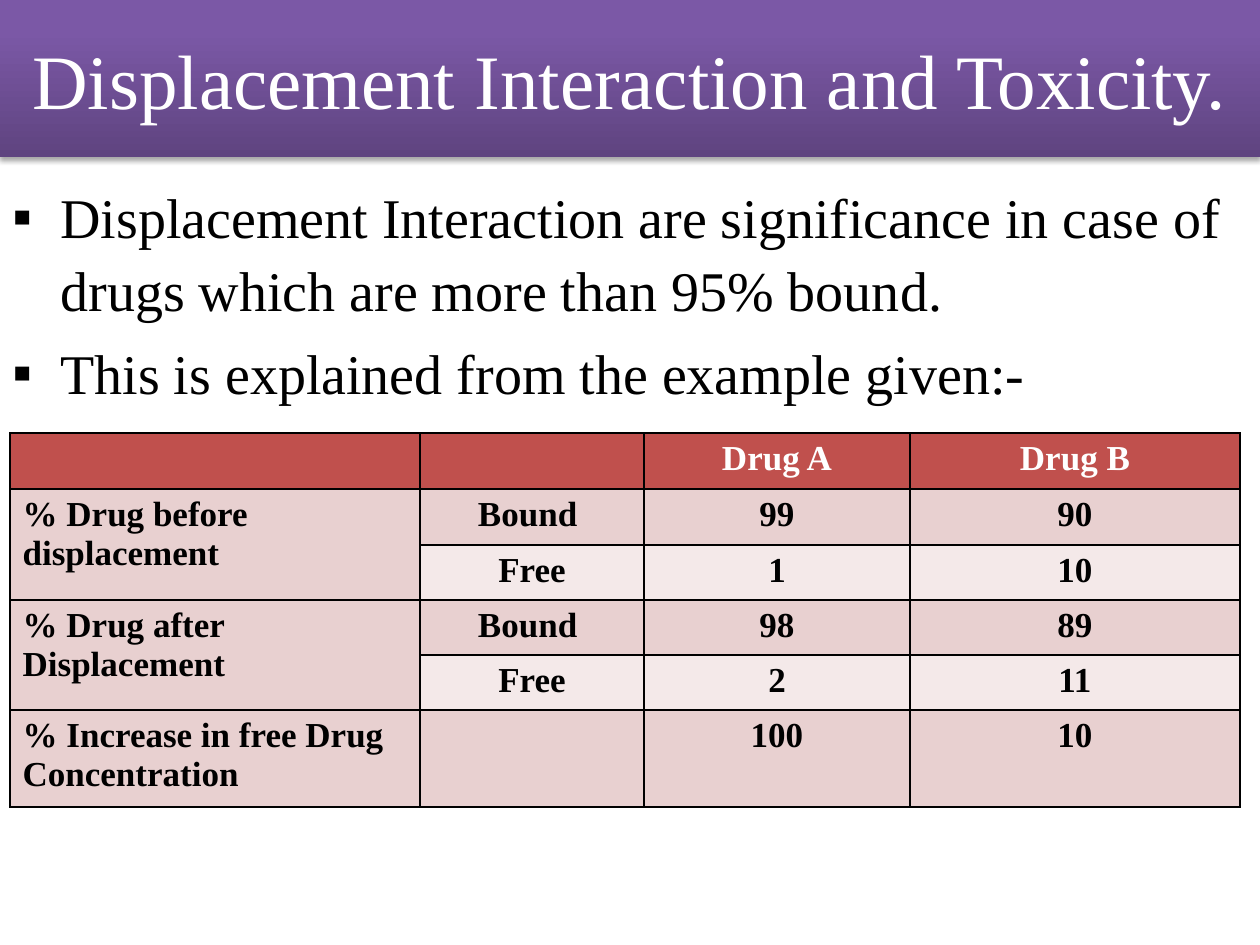
from pptx import Presentation
from pptx.dml.color import RGBColor
from pptx.enum.shapes import MSO_SHAPE as SHAPE
from pptx.enum.text import MSO_ANCHOR as ANCHOR, PP_ALIGN as ALIGN
from pptx.oxml import parse_xml
from pptx.oxml.ns import nsdecls
from pptx.util import Emu, Pt

NS = nsdecls("a")
SCALE = 914400 / 126


def px(n):
    return Emu(round(n * SCALE))


def rgb(value):
    return RGBColor.from_string(value)


def solid(color):
    return f'<a:solidFill><a:srgbClr val="{color}"/></a:solidFill>'


def write(p, text, font="Times New Roman", size=20, color="000000",
          bold=False, align=ALIGN.LEFT):
    p.alignment = align
    r = p.add_run()
    r.text = text
    r.font.name = font
    r.font.size = Pt(size)
    r.font.bold = bold
    r.font.color.rgb = rgb(color)


class Deck:
    """Holds the style and the slide being built."""

    header, dark_band, light_band = "C0504D", "E8D0D0", "F4E9E9"
    banner_stops = ((0, "5F4480"), (80, "7B58A6"), (100, "7C57A8"))

    def __init__(self, prs):
        self.slide = prs.slides.add_slide(prs.slide_layouts[6])

    def banner(self, x, y, w, h, text):
        s = self.slide.shapes.add_shape(SHAPE.RECTANGLE, px(x), px(y), px(w), px(h))
        s.line.fill.background()
        stops = "".join(f'<a:gs pos="{at * 1000}"><a:srgbClr val="{c}"/></a:gs>'
                        for at, c in self.banner_stops)
        sp_pr = s._element.spPr
        sp_pr.insert(2, parse_xml(
            f'<a:gradFill {NS} rotWithShape="1"><a:gsLst>{stops}</a:gsLst>'
            '<a:lin ang="16200000" scaled="0"/></a:gradFill>'))
        sp_pr.append(parse_xml(
            f'<a:effectLst {NS}><a:outerShdw blurRad="{Pt(3.1)}" dist="{Pt(1.8)}" '
            'dir="5400000" rotWithShape="0"><a:srgbClr val="000000">'
            '<a:alpha val="35000"/></a:srgbClr></a:outerShdw></a:effectLst>'))
        tf = s.text_frame
        tf.word_wrap = True
        tf.vertical_anchor = ANCHOR.MIDDLE
        write(tf.paragraphs[0], text, size=44, color="FFFFFF", align=ALIGN.CENTER)

    def bullets(self, x, y, w, h, items, indent=48):
        tf = self.slide.shapes.add_textbox(px(x), px(y), px(w), px(h)).text_frame
        tf.word_wrap = True
        for i, text in enumerate(items):
            p = tf.add_paragraph() if i else tf.paragraphs[0]
            p.line_spacing = 1.08
            p.space_before = Pt(6.4 if i else 0)
            write(p, text, size=32)
            p_pr = p._p.get_or_add_pPr()
            p_pr.set("marL", str(px(indent)))
            p_pr.set("indent", str(px(-indent)))
            p_pr.append(parse_xml(f'<a:buFont {NS} typeface="Arial"/>'))
            p_pr.append(parse_xml(f'<a:buChar {NS} char="▪"/>'))

    def cell(self, cell, text, fill, **style):
        tc_pr = cell._tc.get_or_add_tcPr()
        for side in "LRTB":
            tc_pr.append(parse_xml(
                f'<a:ln{side} {NS} w="{Pt(1)}">{solid("000000")}</a:ln{side}>'))
        cell.fill.solid()
        cell.fill.fore_color.rgb = rgb(fill)
        if text:
            write(cell.text_frame.paragraphs[0], text, bold=True, **style)

    def table(self, x, y, widths, heights, rows, merges):
        table = self.slide.shapes.add_table(
            len(rows), len(widths), px(x), px(y),
            px(sum(widths)), px(sum(heights))).table
        for column, w in zip(table.columns, widths):
            column.width = px(w)
        for i, (row, h) in enumerate(zip(rows, heights)):
            table.rows[i].height = px(h)
            for j, text in enumerate(row):
                band = self.dark_band if i % 2 or j == 0 else self.light_band
                self.cell(table.cell(i, j), text, band if i else self.header,
                          color="000000" if i else "FFFFFF",
                          align=ALIGN.CENTER if j else ALIGN.LEFT)
        for first, last in merges:
            table.cell(first, 0).merge(table.cell(last, 0))


def main():
    prs = Presentation()
    prs.slide_width, prs.slide_height = px(1260), px(945)
    deck = Deck(prs)
    deck.banner(0, 0, 1260, 157, "Displacement Interaction and Toxicity.")
    deck.bullets(0, 171, 1260, 242, [
        "Displacement Interaction are significance in case of drugs "
        "which are more than 95% bound.",
        "This is explained from the example given:-",
    ])
    deck.table(10, 433, [410, 224, 266, 330], [56, 56, 55, 55, 55, 97], [
        ["", "", "Drug A", "Drug B"],
        ["% Drug before displacement", "Bound ", "99", "90"],
        ["", "Free", "1", "10"],
        ["% Drug after Displacement", "Bound ", "98", "89"],
        ["", "Free", "2", "11"],
        ["% Increase in free Drug Concentration", "", "100", "10"],
    ], merges=[(1, 2), (3, 4)])
    prs.save("out.pptx")


if __name__ == "__main__":
    main()
